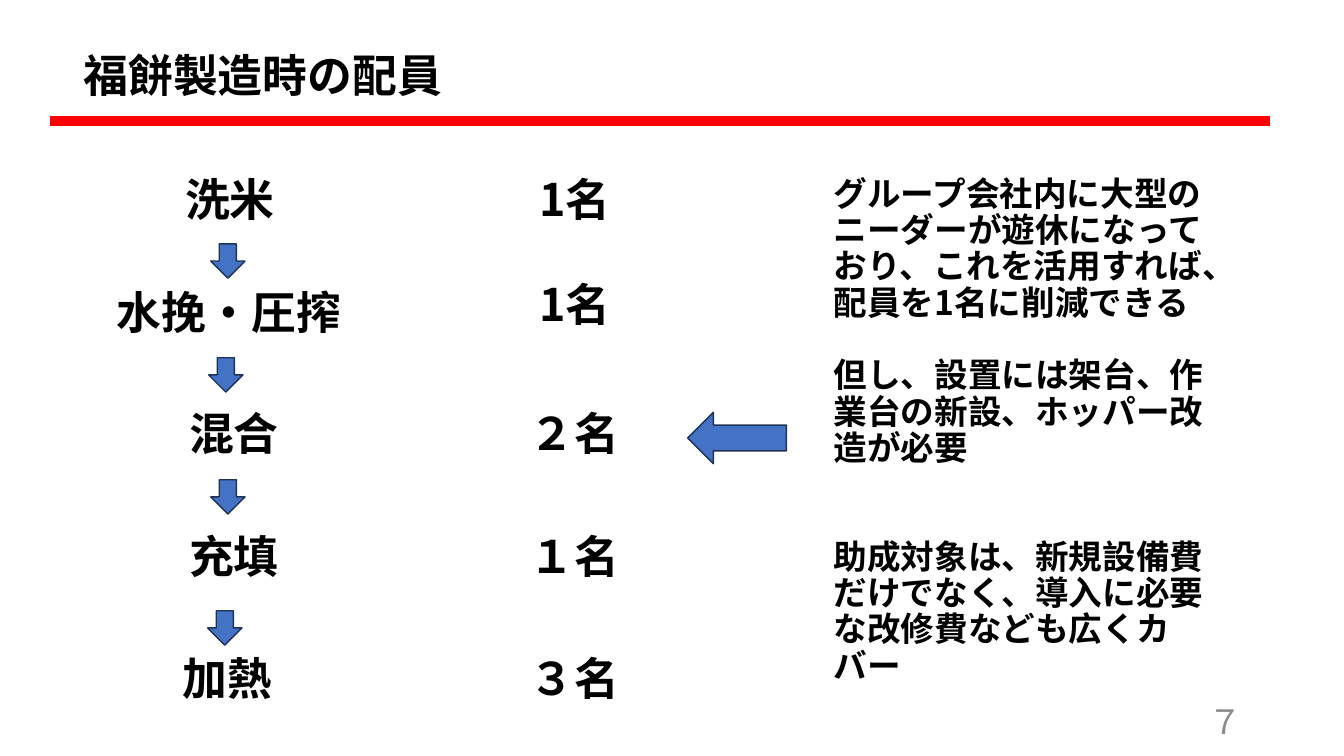
from lxml import etree
from pptx import Presentation
from pptx.dml.color import RGBColor
from pptx.enum.shapes import MSO_CONNECTOR, MSO_SHAPE
from pptx.enum.text import MSO_ANCHOR, PP_ALIGN
from pptx.oxml.ns import qn
from pptx.util import Inches, Pt

LEFT, CENTER, RIGHT = PP_ALIGN.LEFT, PP_ALIGN.CENTER, PP_ALIGN.RIGHT
TOP, MIDDLE = MSO_ANCHOR.TOP, MSO_ANCHOR.MIDDLE
DOWN, BACK = MSO_SHAPE.DOWN_ARROW, MSO_SHAPE.LEFT_ARROW

# Content
TITLE = "福餅製造時の配員"
# step, centre x, top; staff, top
STEPS = [
    ("洗米", 2.28, 1.71, "1名", 1.71),
    ("水挽・圧搾", 2.27, 2.84, "1名", 2.76),
    ("混合", 2.32, 4.04, "２名", 4.04),
    ("充填", 2.32, 5.26, "１名", 5.26),
    ("加熱", 2.26, 6.47, "３名", 6.47),
]
STEP_ARROWS = [(2.09, 2.42), (2.07, 3.55), (2.09, 4.76), (2.06, 6.06)]
# note, blank lines above it
NOTES = [
    ("グループ会社内に大型のニーダーが遊休になっており、これを活用すれば、配員を1名に削減できる", 0),
    ("但し、設置には架台、作業台の新設、ホッパー改造が必要", 1),
    ("助成対象は、新規設備費だけでなく、導入に必要な改修費なども広くカバー", 2),
]
PAGE_NUMBER = "７"

# Style
FONT = "Noto Sans CJK JP"
BLACK, GREY, RED, BLUE, NAVY = "000000", "8C8C8C", "FF0000", "4472C4", "1E3256"
HEADING = {"size": Pt(32), "bold": True}
NOTE = {"size": Pt(24), "bold": True}
NUMBER = {"size": Pt(24), "bold": False}
LINE_SPACING = 0.9
NOTE_LINE = 26
STEP_WIDTH, LABEL_HEIGHT = 2.92, 0.71
STAFF_LEFT, STAFF_WIDTH = 4.73, 1.94


def colour(value):
    return RGBColor.from_string(value)


def add_text(page, box, lines, style, ink=BLACK, align=LEFT,
             spacing=LINE_SPACING, anchor=TOP):
    frame = page.shapes.add_textbox(*map(Inches, box)).text_frame
    frame.word_wrap = True
    frame.vertical_anchor = anchor
    for index, (text, blank_lines) in enumerate(lines):
        para = frame.add_paragraph() if index else frame.paragraphs[0]
        para.alignment = align
        para.line_spacing = spacing
        para.space_before = Pt(NOTE_LINE * blank_lines)
        span = para.add_run()
        span.text = text
        for name, value in style.items():
            setattr(span.font, name, value)
        span.font.color.rgb = colour(ink)
        span.font.name = FONT
        east_asian = etree.SubElement(span.font._element, qn("a:ea"))
        east_asian.set("typeface", FONT)


def add_heading(page, box, text, align=CENTER):
    add_text(page, box, [(text, 0)], HEADING, align=align)


def add_arrow(page, kind, box):
    arrow = page.shapes.add_shape(kind, *map(Inches, box))
    arrow.shadow.inherit = False
    arrow.fill.solid()
    arrow.fill.fore_color.rgb = colour(BLUE)
    arrow.line.color.rgb = colour(NAVY)
    arrow.line.width = Pt(1)


def main():
    deck = Presentation()
    deck.slide_width, deck.slide_height = Inches(13.33), Inches(7.5)
    page = deck.slides.add_slide(deck.slide_layouts[6])

    # Title and rule
    rule = page.shapes.add_connector(
        MSO_CONNECTOR.STRAIGHT, Inches(0.5), Inches(1.2), Inches(12.6), Inches(1.2))
    rule.line.color.rgb = colour(RED)
    rule.line.width = Pt(6.75)
    etree.SubElement(rule._element.spPr, qn("a:effectLst"))
    add_heading(page, (0.73, 0.48, 7.44, LABEL_HEIGHT), TITLE, LEFT)

    # Process steps and staff
    for step, centre, step_top, staff, staff_top in STEPS:
        add_heading(page, (centre - STEP_WIDTH / 2, step_top, STEP_WIDTH, LABEL_HEIGHT), step)
        add_heading(page, (STAFF_LEFT, staff_top, STAFF_WIDTH, LABEL_HEIGHT), staff)

    # Arrows
    for left, top in STEP_ARROWS:
        add_arrow(page, DOWN, (left, top, 0.34, 0.34))
    add_arrow(page, BACK, (6.82, 4.09, 0.98, 0.51))

    # Notes and page number
    add_text(page, (8.17, 1.71, 4.11, 5.79), NOTES, NOTE)
    add_text(page, (9.42, 6.95, 3, 0.4), [(PAGE_NUMBER, 0)], NUMBER, GREY, RIGHT,
             spacing=1.0, anchor=MIDDLE)

    deck.save("out.pptx")


if __name__ == "__main__":
    main()
